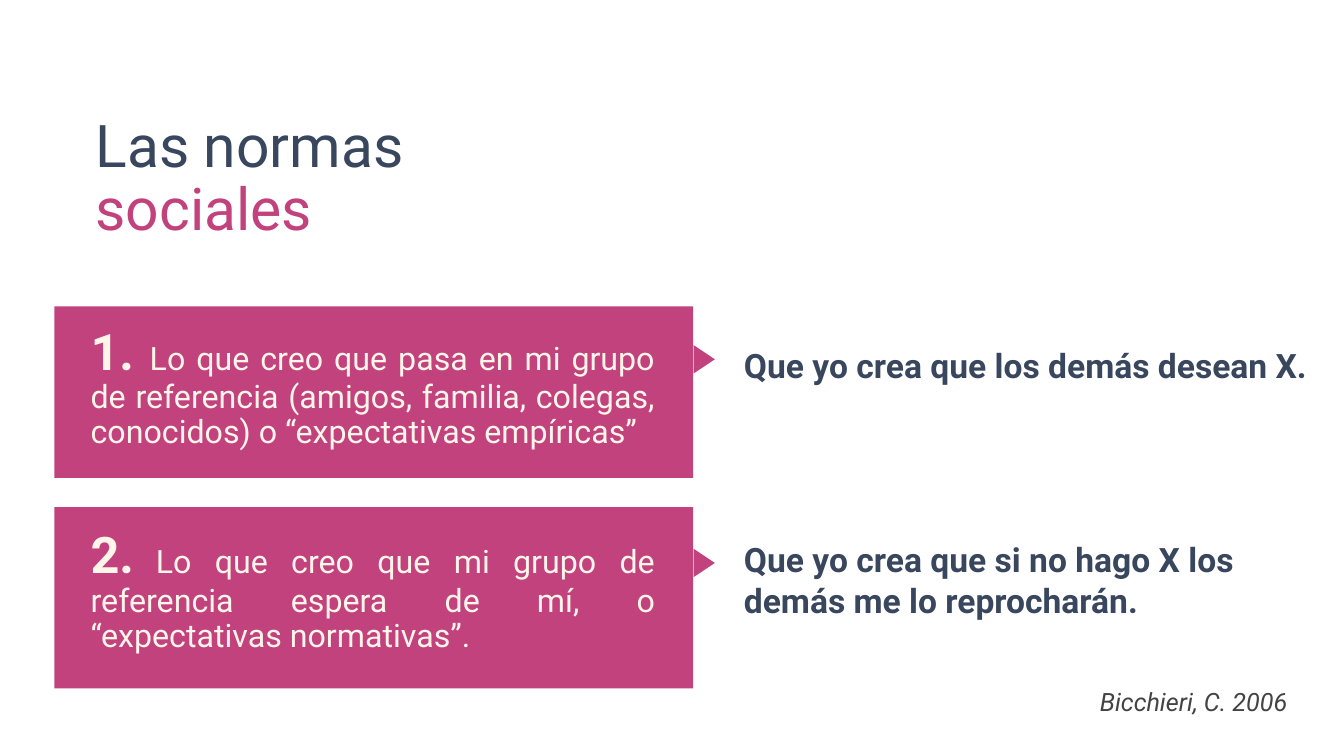
"""Build the slide on social norms: two expectations, each with its consequence."""
from dataclasses import dataclass

from pptx import Presentation, util as u
from pptx.dml.color import RGBColor
from pptx.enum import shapes, text

TITLE = ("Las normas", "sociales")
SOURCE = "Bicchieri, C. 2006"
NORMS = [
    dict(number="1.", gap_size=36,
         belief="Lo que creo que pasa en mi grupo de referencia (amigos, familia, "
                "colegas, conocidos) o “expectativas empíricas”",
         result="Que yo crea que los demás desean X.",
         panel=(40.53, 22.67), belief_top=41.47, arrow_top=46.13, result_row=(44.67, 5.33)),
    dict(number="2.", gap_size=18,
         belief="Lo que creo que mi grupo de referencia espera de mí, o “expectativas normativas”.",
         result="Que yo crea que si no hago X los demás me lo reprocharán.",
         panel=(67.07, 24), belief_top=68.4, arrow_top=73.07, result_row=(70.4, 9.47)),
]


@dataclass(frozen=True)
class Theme:
    """Colours, font and type sizes."""
    font: str = "Roboto"
    navy: str = "38465E"
    pink: str = "C2427E"
    cream: str = "FFF5E9"
    grey: str = "434343"
    title: int = 42
    number: int = 36
    result: int = 24
    belief: int = 23
    source: int = 18


T = Theme()
PANEL_COL = (4.05, 47.53)
BELIEF_COL = (5.77, 44)
ARROW_COL = (51.35, 2.1)
RESULT_COL = (54.38, 45)
BELIEF_HEIGHT, ARROW_HEIGHT = 22.67, 2.8
TITLE_AREA = ((6.37, 39.21), (14.13, 19.33))
SOURCE_AREA = ((71.44, 25.34), (89.87, 4.53))

prs = Presentation()
prs.slide_width, prs.slide_height = u.Inches(13.34), u.Inches(7.5)
slide = prs.slides.add_slide(prs.slide_layouts[6])


def place(col, row):
    """Turn (start, size) percentages into left, top, width and height."""
    (x, w), (y, h) = col, row
    return [int(share * side / 100) for share, side in
            ((x, prs.slide_width), (y, prs.slide_height),
             (w, prs.slide_width), (h, prs.slide_height))]


def style(font, size, color, bold=False, italic=False):
    """Set one font."""
    font.name, font.size, font.bold, font.italic = T.font, u.Pt(size), bold, italic
    font.color.rgb = RGBColor.from_string(color)


def add_block(kind, col, row):
    """Add a flat pink shape."""
    sp = slide.shapes.add_shape(kind, *place(col, row))
    sp.shadow.inherit = False
    sp.fill.solid()
    sp.fill.fore_color.rgb = RGBColor.from_string(T.pink)
    sp.line.fill.background()
    return sp


def add_text(col, row, inset_x, inset_y):
    """Add a wrapping text box and return its frame and first paragraph."""
    tf = slide.shapes.add_textbox(*place(col, row)).text_frame
    tf.word_wrap = True
    tf.margin_left = tf.margin_right = u.Inches(inset_x)
    tf.margin_top = tf.margin_bottom = u.Inches(inset_y)
    return tf, tf.paragraphs[0]


def add_run(p, words, *font):
    """Append a styled run."""
    r = p.add_run()
    r.text = words
    style(r.font, *font)


def add_norm(norm):
    """Draw one belief panel, its arrow and its consequence."""
    add_block(shapes.MSO_SHAPE.RECTANGLE, PANEL_COL, norm["panel"])
    arrow = add_block(shapes.MSO_SHAPE.ISOSCELES_TRIANGLE, ARROW_COL,
                      (norm["arrow_top"], ARROW_HEIGHT))
    arrow.rotation = 90

    tf, p = add_text(BELIEF_COL, (norm["belief_top"], BELIEF_HEIGHT), 0.13, 0.13)
    p.alignment, p.line_spacing = text.PP_ALIGN.JUSTIFY, 0.9
    add_run(p, norm["number"], T.number, T.cream, True)
    add_run(p, " ", norm["gap_size"], T.cream)
    add_run(p, norm["belief"], T.belief, T.cream)

    tf, p = add_text(RESULT_COL, norm["result_row"], 0.13, 0.07)
    p.text = norm["result"]
    style(p.font, T.result, T.navy, bold=True)


tf, p = add_text(*TITLE_AREA, 0.1, 0.05)
tf.vertical_anchor = text.MSO_ANCHOR.MIDDLE
p.line_spacing = 0.9
add_run(p, TITLE[0], T.title, T.navy)
p.add_line_break()
add_run(p, TITLE[1], T.title, T.pink)

for norm in NORMS:
    add_norm(norm)

tf, p = add_text(*SOURCE_AREA, 0.13, 0.07)
p.text, p.alignment = SOURCE, text.PP_ALIGN.RIGHT
style(p.font, T.source, T.grey, italic=True)

prs.save("out.pptx")
